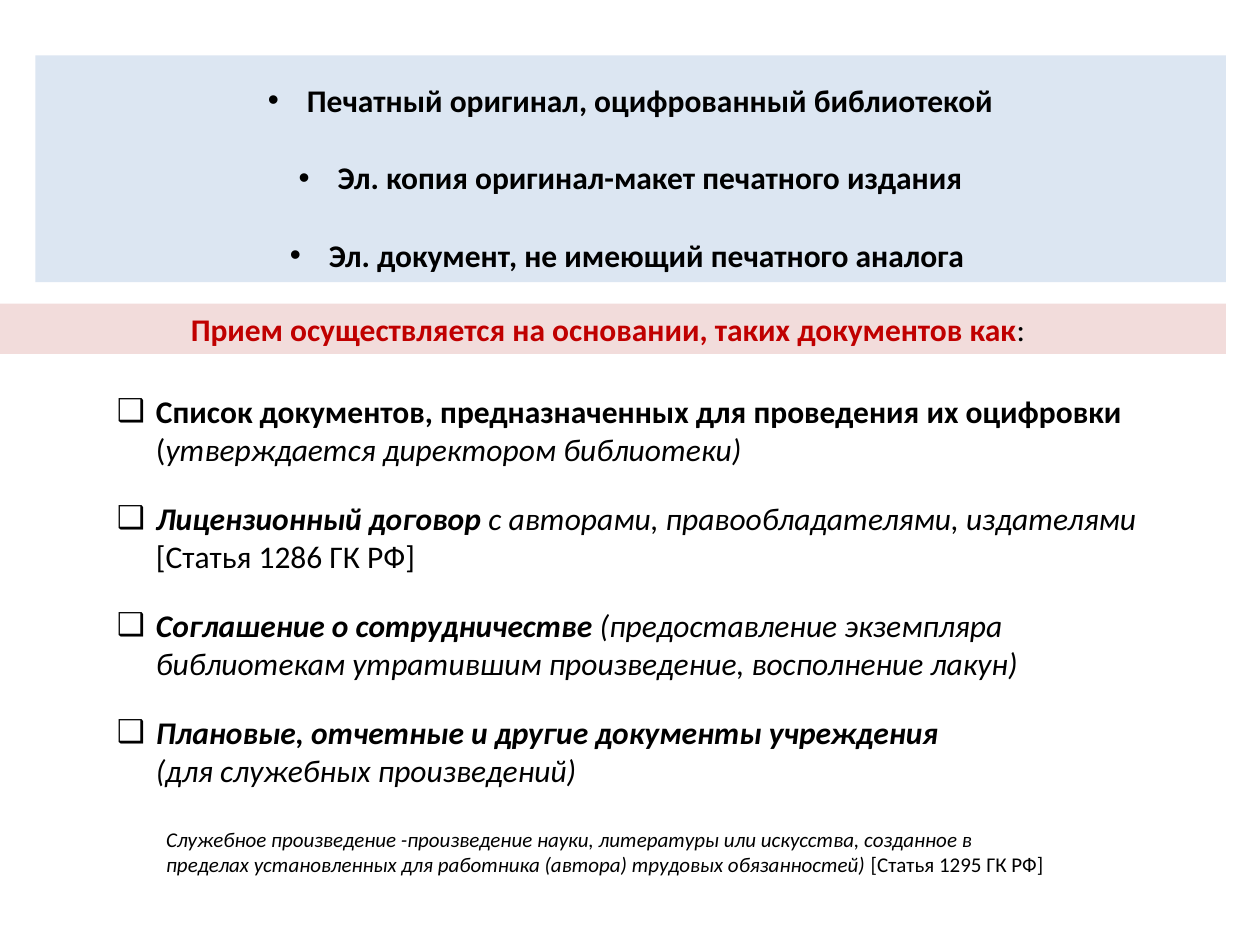
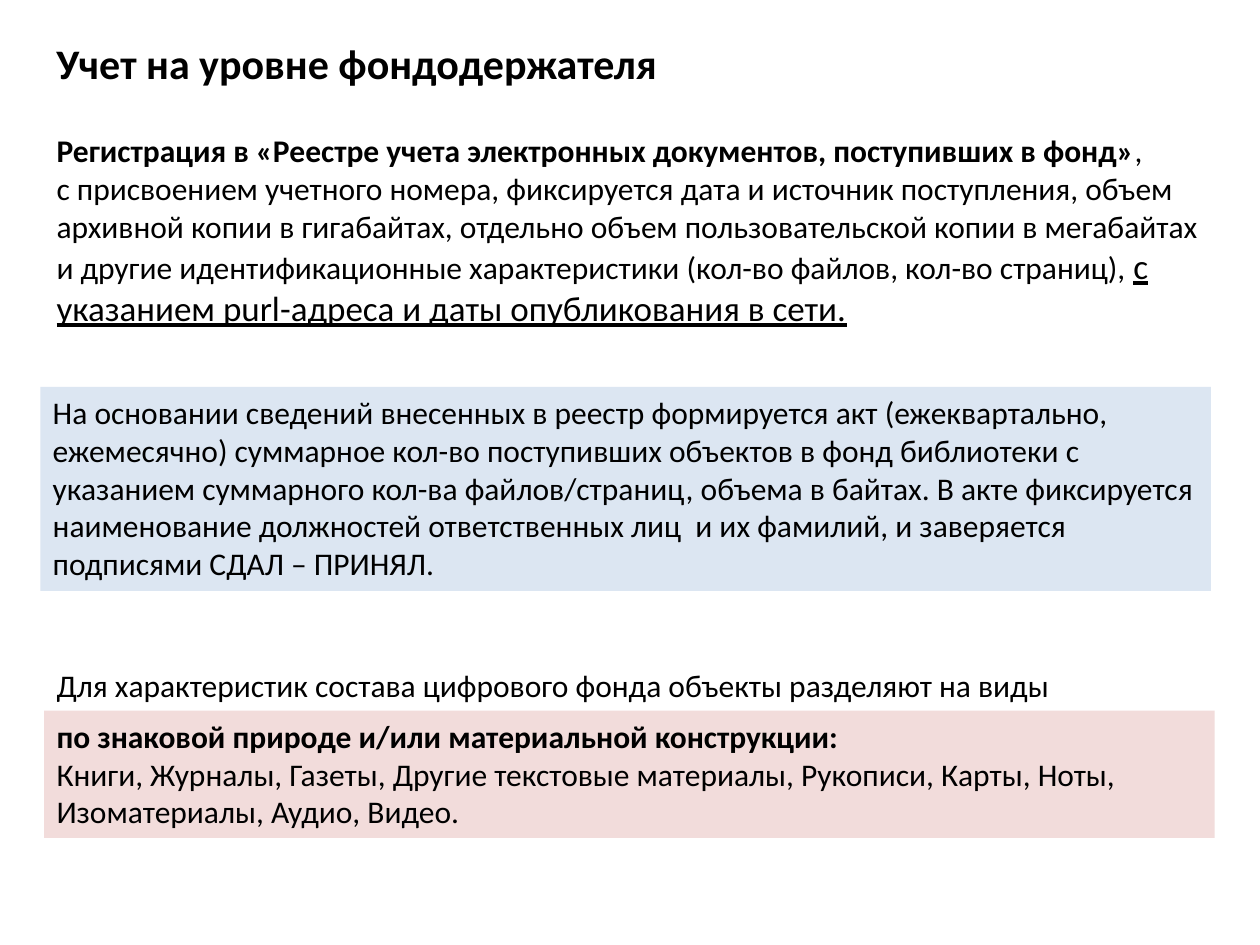
from lxml.etree import SubElement
from pptx import Presentation
from pptx.dml.color import RGBColor
from pptx.enum.shapes import MSO_SHAPE
from pptx.enum.text import MSO_ANCHOR, MSO_AUTO_SIZE, PP_ALIGN
from pptx.oxml.ns import qn
from pptx.util import Inches, Pt

FONT = "Calibri"
INK, RED = "000000", "C00000"
BLUE, PINK = "DCE6F2", "F2DCDB"
INDENT = Inches(0.31)


def color(code):
    """Turn a hex string into a colour."""
    return RGBColor.from_string(code)


def box(slide, left, top, width, height, fill=None):
    """Add a text box, or a filled band, and return its text frame."""
    area = [Inches(n) for n in (left, top, width, height)]
    if fill:
        shape = slide.shapes.add_shape(MSO_SHAPE.RECTANGLE, *area)
        shape.shadow.inherit = False
        shape.fill.solid()
        shape.fill.fore_color.rgb = color(fill)
        shape.line.fill.background()
    else:
        shape = slide.shapes.add_textbox(*area)
    frame = shape.text_frame
    frame.word_wrap = True
    frame.auto_size = MSO_AUTO_SIZE.SHAPE_TO_FIT_TEXT
    frame.vertical_anchor = MSO_ANCHOR.TOP
    return frame


def write(para, text, style="", size=18, ink=INK, align=PP_ALIGN.LEFT):
    """Append text to a paragraph; style holds any of b, i and u."""
    para.alignment = align
    for row, line in enumerate(text.split("\n")):
        if row:
            para.add_line_break()
        if not line:
            continue
        run = para.add_run()
        run.text = line
        font = run.font
        font.name, font.size = FONT, Pt(size)
        font.color.rgb = color(ink)
        font.bold, font.italic = "b" in style, "i" in style
        font.underline = "u" in style


def bullet(para, mark, after):
    """Give a paragraph a hanging bullet and space below."""
    para.space_after = Pt(after)
    props = para._p.get_or_add_pPr()
    props.set("marL", str(INDENT))
    props.set("indent", str(-INDENT))
    SubElement(props, qn("a:buFont")).set("typeface", "Arial")
    SubElement(props, qn("a:buChar")).set("char", mark)


def items(frame, rows, mark, after, align=PP_ALIGN.LEFT, space=1.0):
    """Fill a frame with bulleted rows, each a list of text and style."""
    for place, row in enumerate(rows):
        para = frame.add_paragraph() if place else frame.paragraphs[0]
        para.line_spacing = space
        bullet(para, mark, after)
        for text, style in row:
            write(para, text, style, align=align)


def intake(slide):
    """Build the slide on what is received and on which papers."""
    papers = [
        [("Список документов, предназначенных для проведения их оцифровки ", "b"),
         ("(", ""), ("утверждается директором библиотеки)", "i")],
        [("Лицензионный договор ", "bi"),
         ("с авторами, правообладателями, издателями ", "i"),
         ("[Статья 1286 ГК РФ]", "")],
        [("Соглашение о сотрудничестве ", "bi"),
         ("(предоставление экземпляра библиотекам утратившим произведение, "
          "восполнение лакун)", "i")],
        [("Плановые, отчетные и другие документы учреждения \n", "bi"),
         ("(для служебных произведений)", "i")],
    ]
    items(box(slide, 0.83, 3.06, 8.66, 3.28), papers, "❑", 18)

    kinds = [
        "Печатный оригинал, оцифрованный библиотекой",
        "Эл. копия оригинал-макет печатного издания",
        "Эл. документ, не имеющий печатного аналога ",
    ]
    items(box(slide, 0.28, 0.44, 9.45, 1.8, BLUE),
          [[(kind, "b")] for kind in kinds], "•", 12, PP_ALIGN.CENTER, 1.5)

    head = box(slide, -0.08, 2.41, 9.81, 0.4, PINK).paragraphs[0]
    write(head, "Прием осуществляется на основании, таких документов как",
          "b", ink=RED, align=PP_ALIGN.CENTER)
    write(head, ":", align=PP_ALIGN.CENTER)

    note = box(slide, 1.22, 6.51, 7.24, 0.5).paragraphs[0]
    write(note, "Служебное произведение -произведение науки, литературы или "
          "искусства, созданное в пределах установленных для работника "
          "(автора) трудовых обязанностей) ", "i", 12)
    write(note, "[Статья 1295 ГК РФ]", size=12)


def record(slide):
    """Build the slide on record keeping by the holder."""
    kinds = box(slide, 0.35, 5.64, 9.29, 1.01, PINK).paragraphs[0]
    write(kinds, "по знаковой природе и/или материальной конструкции:\n", "b")
    write(kinds, "Книги, Журналы, Газеты, Другие текстовые материалы, "
          "Рукописи, Карты, Ноты, Изоматериалы, Аудио, Видео.")

    entry = box(slide, 0.35, 0.99, 9.29, 1.68).paragraphs[0]
    write(entry, "Регистрация в «Реестре учета электронных документов, "
          "поступивших в фонд»", "b")
    write(entry, ", \nс присвоением учетного номера, фиксируется дата и "
          "источник поступления, объем архивной копии в гигабайтах, отдельно "
          "объем пользовательской копии в мегабайтах и другие "
          "идентификационные характеристики (кол-во файлов, кол-во страниц), ")
    write(entry, "с указанием purl-адреса и даты опубликования в сети.", "u", 20)

    act = box(slide, 0.32, 3.07, 9.29, 1.62, BLUE).paragraphs[0]
    write(act, "На основании сведений внесенных в реестр формируется акт "
          "(ежеквартально, ежемесячно) суммарное кол-во поступивших объектов "
          "в фонд библиотеки с указанием суммарного кол-ва файлов/страниц, "
          "объема в байтах. В акте фиксируется наименование должностей "
          "ответственных лиц  и их фамилий, и заверяется подписями "
          "СДАЛ – ПРИНЯЛ.")

    title = box(slide, 0.35, 0.25, 9.57, 0.5).paragraphs[0]
    write(title, "Учет на уровне фондодержателя", "b", 24)

    lead = box(slide, 0.35, 5.24, 9.29, 0.4).paragraphs[0]
    write(lead, "Для характеристик состава цифрового фонда объекты "
          "разделяют на виды")


def main():
    """Build and save the deck."""
    deck = Presentation()
    deck.slide_width, deck.slide_height = Inches(10), Inches(7.5)
    for build in (intake, record):
        build(deck.slides.add_slide(deck.slide_layouts[6]))
    deck.save("out.pptx")


if __name__ == "__main__":
    main()
